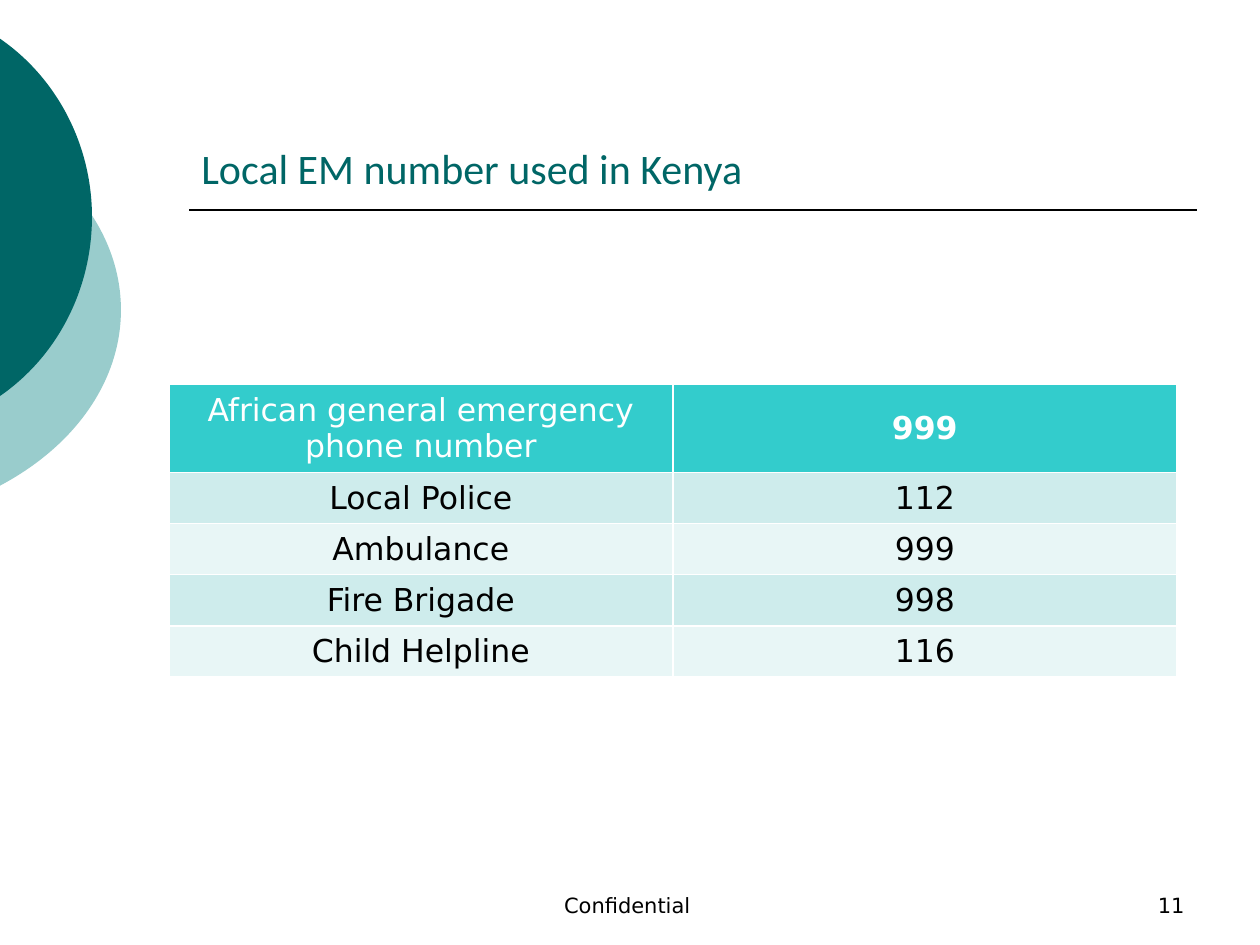
from lxml import etree
from pptx import Presentation, util as u
from pptx.dml.color import RGBColor
from pptx.enum import shapes, text
from pptx.oxml.ns import qn

TEAL = RGBColor(0x00, 0x66, 0x66)
PALE_TEAL = RGBColor(0x99, 0xCC, 0xCC)
HEADER = RGBColor(0x33, 0xCC, 0xCC)
BANDS = [RGBColor(0xCE, 0xEC, 0xEC), RGBColor(0xE8, 0xF6, 0xF6)]
WHITE = RGBColor(0xFF, 0xFF, 0xFF)
BLACK = RGBColor(0x00, 0x00, 0x00)
BODY_FONT = "DejaVu Sans"

TITLE = "Local EM number used in Kenya"
FOOTER = "Confidential "
PAGE = "11"
NUMBERS = [
    ("African general emergency phone number", "999"),
    ("Local Police", "112"),
    ("Ambulance", "999"),
    ("Fire Brigade", "998"),
    ("Child Helpline", "116"),
]
DISCS = [
    {"box": (-3.54, 0.75, 4.5, 3.42), "color": PALE_TEAL,
     "start": (-0.01, 1.06),
     "curves": [[(0.6, 1.38), (0.96, 1.9), (0.96, 2.46)],
                [(0.96, 3.02), (0.6, 3.54), (-0.01, 3.86)]]},
    {"box": (-2.65, 0, 3.38, 3.45), "color": TEAL,
     "start": (-0.01, 0.3),
     "curves": [[(0.46, 0.62), (0.73, 1.16), (0.73, 1.72)],
                [(0.73, 2.29), (0.46, 2.83), (-0.01, 3.15)]]},
]
RULE_TOP = 7.5 * 2 / 9
COLUMN_WIDTH = u.Inches(4)
HEADER_HEIGHT, ROW_HEIGHT = u.Pt(48), u.Pt(29.2)


def add_disc(slide, box, color, start, curves):
    left, top, width, height = map(u.Inches, box)
    right, bottom = left + width, top + height
    builder = slide.shapes.build_freeform(left, top)
    builder.add_line_segments([(right, top), (right, bottom), (left, bottom)], close=True)
    disc = builder.convert_to_shape()
    disc.shadow.inherit = False
    disc.fill.solid()
    disc.fill.fore_color.rgb = color
    disc.line.fill.background()

    outline = next(disc._element.iter(qn("a:path")))
    for corner in list(outline):
        outline.remove(corner)
    steps = [("moveTo", [start])] + [("cubicBezTo", curve) for curve in curves]
    for command, points in steps:
        step = etree.SubElement(outline, qn(f"a:{command}"))
        for x, y in points:
            etree.SubElement(step, qn("a:pt"), x=str(u.Inches(x) - left),
                             y=str(u.Inches(y) - top))
    etree.SubElement(outline, qn("a:close"))


def style(paragraph, size, color, font=BODY_FONT, align=text.PP_ALIGN.LEFT, bold=False):
    paragraph.alignment = align
    paragraph.font.size = u.Pt(size)
    paragraph.font.name = font
    paragraph.font.color.rgb = color
    paragraph.font.bold = bold


def add_label(slide, wording, left, top, width, height, size, color, **look):
    frame = slide.shapes.add_textbox(*map(u.Inches, (left, top, width, height))).text_frame
    frame.word_wrap = True
    frame.vertical_anchor = text.MSO_ANCHOR.BOTTOM
    frame.text = wording
    style(frame.paragraphs[0], size, color, **look)


def add_numbers(slide):
    rows, columns = len(NUMBERS), len(NUMBERS[0])
    table = slide.shapes.add_table(
        rows, columns, u.Inches(1.34), u.Inches(3.05),
        COLUMN_WIDTH * columns, HEADER_HEIGHT + ROW_HEIGHT * (rows - 1)).table
    for r, row in enumerate(NUMBERS):
        is_header = r == 0
        table.rows[r].height = HEADER_HEIGHT if is_header else ROW_HEIGHT
        for c, wording in enumerate(row):
            cell = table.cell(r, c)
            cell.text = wording
            cell.vertical_anchor = text.MSO_ANCHOR.MIDDLE
            cell.fill.solid()
            cell.fill.fore_color.rgb = HEADER if is_header else BANDS[(r - 1) % 2]
            style(cell.text_frame.paragraphs[0], 18, WHITE if is_header else BLACK,
                  align=text.PP_ALIGN.CENTER, bold=is_header and c == 1)


def main():
    deck = Presentation()
    deck.slide_width, deck.slide_height = u.Inches(10), u.Inches(7.5)
    slide = deck.slides.add_slide(deck.slide_layouts[6])
    for disc in DISCS:
        add_disc(slide, **disc)
    rule = slide.shapes.add_connector(
        shapes.MSO_CONNECTOR.STRAIGHT, *map(u.Inches, (1.5, RULE_TOP, 9.5, RULE_TOP)))
    rule.line.color.rgb = BLACK
    rule.line.width = u.Pt(1)
    etree.SubElement(rule._element.spPr, qn("a:effectLst"))
    add_label(slide, TITLE, 1.5, 0.33, 8, 1.25, 24, TEAL, font="Calibri")
    add_label(slide, FOOTER, 3.42, 6.83, 3.17, 0.5, 12, BLACK, align=text.PP_ALIGN.CENTER)
    add_label(slide, PAGE, 7.17, 6.83, 2.33, 0.5, 12, BLACK, align=text.PP_ALIGN.RIGHT)
    add_numbers(slide)
    deck.save("out.pptx")


if __name__ == "__main__":
    main()
